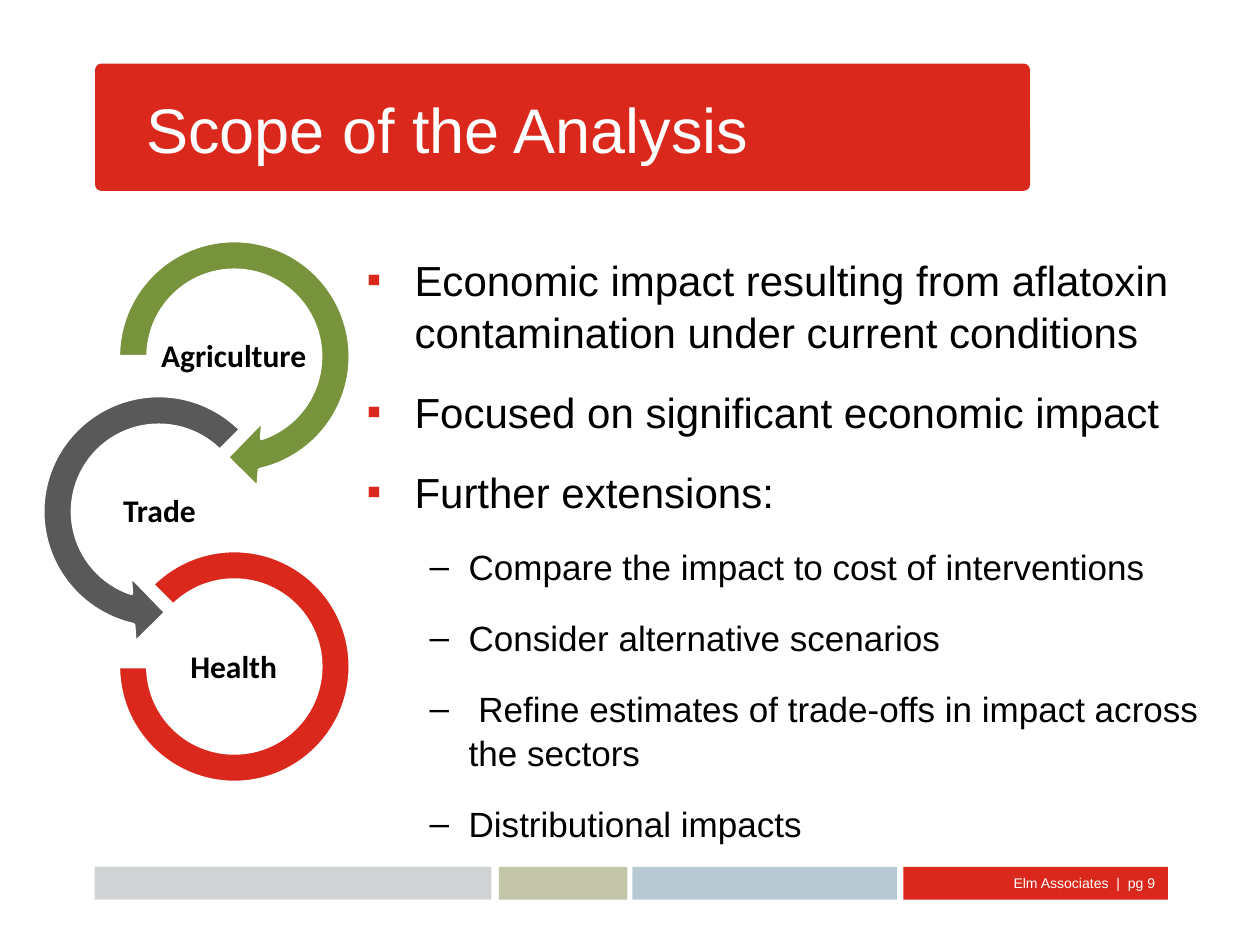
from lxml.etree import SubElement
from pptx import Presentation
from pptx.dml.color import RGBColor
from pptx.enum.shapes import MSO_SHAPE as Shape
from pptx.enum.text import MSO_ANCHOR as Anchor, MSO_AUTO_SIZE as AutoSize, PP_ALIGN as Align
from pptx.oxml.ns import qn
from pptx.util import Inches, Pt

RED = RGBColor(0xDA, 0x29, 0x1C)
GREY = RGBColor(0xD0, 0xD3, 0xD4)
SAGE = RGBColor(0xC3, 0xC6, 0xA8)
BLUE = RGBColor(0xB7, 0xC9, 0xD3)
GREEN = RGBColor(0x77, 0x93, 0x3C)
DARK = RGBColor(0x59, 0x59, 0x59)
WHITE = RGBColor(0xFF, 0xFF, 0xFF)
BLACK = RGBColor(0, 0, 0)

TITLE = "Scope of the Analysis"
FOOTER = "Elm Associates  |  pg 9"
POINTS = [
    (0, "Economic impact resulting from aflatoxin contamination under current conditions"),
    (0, "Focused on significant economic impact"),
    (0, "Further extensions:"),
    (1, "Compare the impact to cost of interventions"),
    (1, "Consider alternative scenarios"),
    (1, " Refine estimates of trade-offs in impact across the sectors"),
    (1, "Distributional impacts"),
]
# per level: size, left indent, hanging indent, bullet, bullet colour
LEVELS = [(24, 0.38, 0.38, "▪", RED), (20, 0.81, 0.31, "–", BLACK)]

# left, width, colour
FOOTER_BARS = [(0.75, 3.15, GREY), (3.96, 1.02, SAGE), (5.02, 2.1, BLUE), (7.17, 2.1, RED)]
FOOTER_TOP, FOOTER_HEIGHT = 6.88, 0.26

# label, label left and top, shape, shape left, top and size, colour, adjustments
SECTORS = [
    ("Agriculture", 1.26, 2.54, Shape.CIRCULAR_ARROW, 0.79, 1.76, 2.14, GREEN,
     (0.11, 11.42, 45, 108, 0.125)),
    ("Trade", 0.67, 3.77, Shape.LEFT_CIRCULAR_ARROW, 0.19, 2.99, 2.14, DARK,
     (0.11, 11.42, 63, 189, 0.125)),
    ("Health", 1.26, 5.01, Shape.BLOCK_ARC, 0.94, 4.37, 1.84, RED,
     (135, 108, 0.127)),
]
LABEL_SIZE = (1.19, 0.59)


def inches(*values):
    return [Inches(value) for value in values]


def format_frame(frame, margins, anchor):
    left, top, right, bottom = inches(*margins)
    settings = dict(margin_left=left, margin_top=top, margin_right=right, margin_bottom=bottom,
                    vertical_anchor=anchor, word_wrap=True, auto_size=AutoSize.NONE)
    for name, value in settings.items():
        setattr(frame, name, value)


def write(para, text, size, color, align=Align.LEFT, font="Arial", bold=False):
    para.alignment = align
    span = para.add_run()
    span.text = text
    for name, value in dict(name=font, size=Pt(size), bold=bold).items():
        setattr(span.font, name, value)
    span.font.color.rgb = color


def place(shape, *bounds):
    for name, value in zip(("left", "top", "width", "height"), inches(*bounds)):
        setattr(shape, name, value)


def add_shape(shapes, kind, bounds, fill, adjustments, line=None, line_width=0):
    shape = shapes.add_shape(kind, *inches(*bounds))
    shape.shadow.inherit = False
    shape.fill.solid()
    shape.fill.fore_color.rgb = fill
    if line is None:
        shape.line.fill.background()
    else:
        shape.line.color.rgb = line
        shape.line.width = Pt(line_width)
    for index, value in enumerate(adjustments):
        shape.adjustments[index] = value
    return shape


def add_bullet(para, char, color, left, hanging):
    properties = para._p.get_or_add_pPr()
    properties.set("marL", str(Inches(left)))
    properties.set("indent", str(-Inches(hanging)))
    SubElement(SubElement(properties, qn("a:buClr")), qn("a:srgbClr"), val=str(color))
    SubElement(properties, qn("a:buFont"), typeface="Arial")
    SubElement(properties, qn("a:buChar"), char=char)


def add_bands(slide):
    add_shape(slide.shapes, Shape.ROUNDED_RECTANGLE, (0.76, 0.51, 7.41, 1), RED, [0.045], RED, 0.75)
    for left, width, color in FOOTER_BARS:
        bar = add_shape(slide.shapes, Shape.ROUNDED_RECTANGLE,
                        (left, FOOTER_TOP, width, FOOTER_HEIGHT), color, [0])
    format_frame(bar.text_frame, (0.1, 0.05, 0.1, 0.05), Anchor.MIDDLE)
    write(bar.text_frame.paragraphs[0], FOOTER, 8, WHITE, Align.RIGHT)


def fill_placeholders(slide):
    title, body = slide.placeholders
    for holder in (title, body):
        slide.shapes._spTree.append(holder._element)  # in front of the bands
    place(title, 0.78, 0.51, 7.38, 1.01)
    format_frame(title.text_frame, (0.38, 0.05, 0.1, 0.05), Anchor.MIDDLE)
    write(title.text_frame.paragraphs[0], TITLE, 36, WHITE)

    place(body, 2.81, 1.95, 6.84, 5.03)
    frame = body.text_frame
    format_frame(frame, (0.1, 0.05, 0.1, 0.05), Anchor.TOP)
    for index, (level, text) in enumerate(POINTS):
        para = frame.add_paragraph() if index else frame.paragraphs[0]
        size, left, hanging, char, color = LEVELS[level]
        add_bullet(para, char, color, left, hanging)
        spacing = dict(level=level, line_spacing=1.04, space_after=Pt(8),
                       space_before=Pt(7.7 if index else 0))
        for name, value in spacing.items():
            setattr(para, name, value)
        write(para, text, size, BLACK)


def add_sectors(slide):
    group = slide.shapes.add_group_shape()
    for label, label_left, label_top, kind, left, top, size, color, adjustments in SECTORS:
        add_shape(group.shapes, kind, (left, top, size, size), color, adjustments, WHITE, 2)
        box = group.shapes.add_textbox(*inches(label_left, label_top, *LABEL_SIZE))
        format_frame(box.text_frame, [0.01] * 4, Anchor.MIDDLE)
        para = box.text_frame.paragraphs[0]
        para.line_spacing = 0.9
        write(para, label, 18, BLACK, Align.CENTER, "Calibri", True)


def main():
    deck = Presentation()
    deck.slide_width, deck.slide_height = inches(10, 7.5)
    slide = deck.slides.add_slide(deck.slide_layouts[1])
    add_bands(slide)
    fill_placeholders(slide)
    add_sectors(slide)
    deck.save("out.pptx")


if __name__ == "__main__":
    main()
